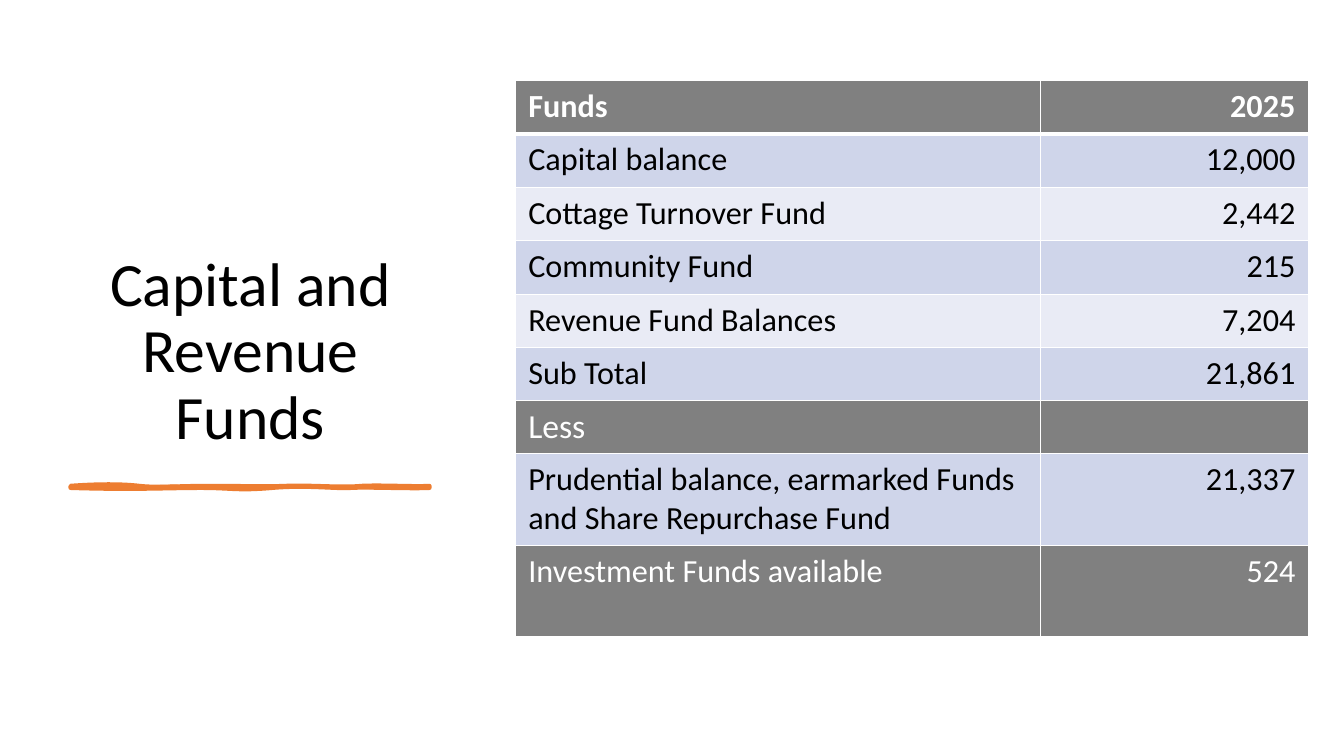
from copy import deepcopy
from dataclasses import dataclass

from lxml import etree
from pptx import Presentation
from pptx.dml.color import RGBColor
from pptx.enum.text import MSO_ANCHOR, MSO_AUTO_SIZE, PP_ALIGN
from pptx.oxml.ns import qn
from pptx.util import Emu, Pt

LEFT, CENTER, RIGHT = PP_ALIGN.LEFT, PP_ALIGN.CENTER, PP_ALIGN.RIGHT
BOTTOM = MSO_ANCHOR.BOTTOM
NO_FIT = MSO_AUTO_SIZE.NONE

EMU_PER_PX = 9144  # 100 px to the inch
FONT = "Calibri"
BLACK, WHITE, GREY, ORANGE = "000000", "FFFFFF", "808080", "ED7D31"
BAND_DARK, BAND_LIGHT = "CFD5EA", "E9EBF5"
HEADER_BORDERS = {"a:lnL": 1, "a:lnR": 1, "a:lnT": 1, "a:lnB": 3}

Point = tuple[int, int]


@dataclass
class FundRow:
    label: str
    amount: str
    fill: str
    color: str = BLACK
    size: int = 23
    bold: bool = False
    height: int = 53


FUND_ROWS = [
    FundRow("Funds", "2025", GREY, WHITE, bold=True),
    FundRow("Capital balance", "12,000", BAND_DARK),
    FundRow("Cottage Turnover Fund", "2,442", BAND_LIGHT),
    FundRow("Community Fund", "215", BAND_DARK),
    FundRow("Revenue Fund Balances", "7,204", BAND_LIGHT),
    FundRow("Sub Total", "21,861", BAND_DARK, height=52),
    FundRow("Less", "", GREY, WHITE, size=24),
    FundRow("Prudential balance, earmarked Funds and Share Repurchase Fund",
            "21,337", BAND_DARK, height=91),
    FundRow("Investment Funds available", "524", GREY, WHITE, height=91),
]
COLUMN_WIDTHS = [521, 266]

# Brush stroke: start point, then two control points and an end point per curve
STROKE_TOP, STROKE_HEIGHT = 482, 2
STROKE_OUTLINE = [
    (70, 482),
    (97, 480), (121, 480), (138, 482), (155, 484), (177, 482), (209, 482),
    (241, 482), (260, 483), (284, 482), (308, 481), (339, 484), (359, 482),
    (379, 481), (412, 483), (426, 482), (426, 483), (426, 484), (426, 484),
    (408, 485), (364, 483), (348, 484), (332, 485), (304, 481), (270, 484),
    (235, 487), (231, 484), (199, 484), (166, 484), (132, 486), (70, 484),
    (70, 484), (70, 483), (70, 482),
]
STROKE_BODY = [
    (70, 482),
    (102, 484), (110, 483), (138, 482), (166, 481), (169, 480), (199, 482),
    (228, 484), (261, 483), (277, 482), (293, 481), (327, 485), (344, 482),
    (362, 480), (397, 486), (426, 482), (426, 483), (426, 483), (426, 484),
    (412, 484), (372, 487), (355, 484), (338, 482), (309, 484), (277, 484),
    (244, 484), (240, 483), (216, 484), (193, 485), (179, 483), (145, 484),
    (111, 485), (92, 484), (70, 484), (70, 483), (70, 482), (70, 482),
]


def px(value: int) -> Emu:
    return Emu(value * EMU_PER_PX)


def rgb(color: str) -> RGBColor:
    return RGBColor.from_string(color)


def write(tf, text: str, size: int, color: str, align, bold: bool = False) -> None:
    tf.text = text
    p = tf.paragraphs[0]
    p.alignment = align
    for r in p.runs:
        r.font.name = FONT
        r.font.size = Pt(size)
        r.font.bold = bold
        r.font.color.rgb = rgb(color)


def add_title(slide) -> None:
    title = slide.shapes.title
    title.left, title.top, title.width, title.height = map(px, (53, 63, 391, 391))
    tf = title.text_frame
    tf.word_wrap = True
    tf.auto_size = NO_FIT
    tf.vertical_anchor = BOTTOM
    write(tf, "Capital and Revenue Funds", 44, BLACK, CENTER)
    tf.paragraphs[0].line_spacing = 0.9


def join_into_curves(path) -> None:
    """Turn every three line segments of a path into one cubic curve."""
    segments = path.findall(qn("a:lnTo"))
    for i in range(0, len(segments), 3):
        curve = etree.Element(qn("a:cubicBezTo"))
        segments[i].addprevious(curve)
        for segment in segments[i:i + 3]:
            curve.append(segment[0])
            path.remove(segment)


def add_brush_stroke(slide) -> None:
    builder = slide.shapes.build_freeform(*STROKE_OUTLINE[0], scale=EMU_PER_PX)
    builder.add_line_segments(STROKE_OUTLINE[1:], close=True)
    builder.move_to(*STROKE_BODY[0])
    builder.add_line_segments(STROKE_BODY[1:], close=True)
    sp = builder.convert_to_shape()
    sp.shadow.inherit = False
    sp.fill.solid()
    sp.fill.fore_color.rgb = rgb(ORANGE)
    sp.line.color.rgb = rgb(ORANGE)
    sp.line.width = Pt(3)

    # Let the frame hold the end points only; curve handles reach outside it
    line_path = next(sp._element.iter(qn("a:path")))
    overhang = STROKE_TOP - min(y for _, y in STROKE_OUTLINE + STROKE_BODY)
    for pt in line_path.iter(qn("a:pt")):
        pt.set("y", str(int(pt.get("y")) - overhang))
    line_path.set("h", str(STROKE_HEIGHT))
    sp.top, sp.height = px(STROKE_TOP), px(STROKE_HEIGHT)

    # Split the contours: the first is only stroked, the second only filled
    fill_path = deepcopy(line_path)
    line_path.addnext(fill_path)
    split = [child.tag for child in line_path].index(qn("a:close")) + 1
    for child in line_path[split:]:
        line_path.remove(child)
    for child in fill_path[:split]:
        fill_path.remove(child)
    line_path.set("fill", "none")
    fill_path.set("stroke", "0")
    join_into_curves(line_path)
    join_into_curves(fill_path)


def add_borders(cell, widths: dict[str, int], color: str) -> None:
    tc_pr = cell._tc.get_or_add_tcPr()
    for position, (tag, width) in enumerate(widths.items()):
        ln = etree.Element(qn(tag), w=str(Pt(width)))
        fill = etree.SubElement(ln, qn("a:solidFill"))
        etree.SubElement(fill, qn("a:srgbClr"), val=color)
        tc_pr.insert(position, ln)


def add_fund_table(slide) -> None:
    height = sum(row.height for row in FUND_ROWS)
    frame = slide.shapes.add_table(
        len(FUND_ROWS), len(COLUMN_WIDTHS),
        px(511), px(80), px(sum(COLUMN_WIDTHS)), px(height))
    table = frame.table
    for column, width in zip(table.columns, COLUMN_WIDTHS):
        column.width = px(width)
    for i, row in enumerate(FUND_ROWS):
        table.rows[i].height = px(row.height)
        for j, (text, align) in enumerate([(row.label, LEFT), (row.amount, RIGHT)]):
            cell = table.cell(i, j)
            cell.fill.solid()
            cell.fill.fore_color.rgb = rgb(row.fill)
            cell.margin_left = cell.margin_right = px(13)
            cell.margin_top = cell.margin_bottom = px(6)
            write(cell.text_frame, text, row.size, row.color, align, row.bold)
            if i == 0:
                add_borders(cell, HEADER_BORDERS, WHITE)


def main() -> None:
    prs = Presentation()
    prs.slide_width, prs.slide_height = px(1333), px(750)
    slide = prs.slides.add_slide(prs.slide_layouts[5])
    add_title(slide)
    add_brush_stroke(slide)
    add_fund_table(slide)
    prs.save("out.pptx")


if __name__ == "__main__":
    main()
